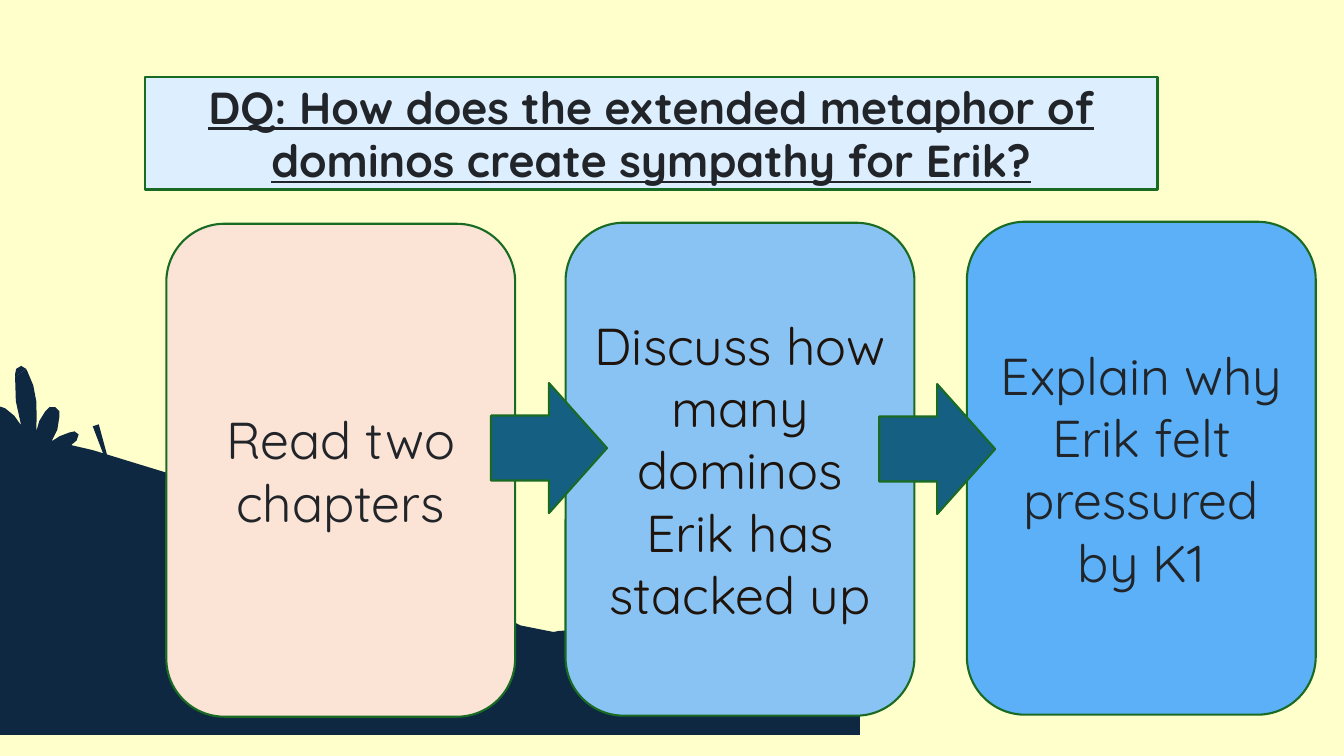
import pptx
import pptx.dml.color
import pptx.enum.shapes
import pptx.enum.text
import pptx.util

Inches = pptx.util.Inches
Pt = pptx.util.Pt
RGBColor = pptx.dml.color.RGBColor
MSO_SHAPE = pptx.enum.shapes.MSO_SHAPE

CREAM = RGBColor(0xFF, 0xFF, 0xCC)
NAVY = RGBColor(0x0E, 0x28, 0x41)
GREEN = RGBColor(0x19, 0x6B, 0x24)
TEAL = RGBColor(0x15, 0x60, 0x82)
PALE_BLUE = RGBColor(0xDD, 0xEE, 0xFF)
PEACH = RGBColor(0xFB, 0xE3, 0xD6)
SKY = RGBColor(0x89, 0xC3, 0xF3)
BRIGHT_BLUE = RGBColor(0x5B, 0xB0, 0xF7)
CHARCOAL = RGBColor(0x21, 0x25, 0x29)
BROWN_BLACK = RGBColor(0x1F, 0x14, 0x0C)

# Each outline is a start point, then line ends (2 numbers) or Bézier curves (6 numbers).
HILL = [
    (-0.3, 4.18), (-0.3, 7.29), (8.53, 7.29), (8.53, 6.64), (7.91, 6.41),
    (7.84, 6.41, 7.74, 6.41, 7.67, 6.36), (7.12, 6.09), (7.06, 6.08),
    (6.9, 6.08, 6.47, 6.22, 6.31, 6.22), (6.24, 6.22), (5.54, 6.26), (5.49, 6.27),
    (5.32, 6.27, 5, 6.17, 4.85, 6.05), (4.69, 5.91, 4.15, 5.46, 4.05, 5.45),
    (2.48, 5.3), (2.44, 5.29, 2.11, 4.88, 1.98, 4.79),
    (1.85, 4.69, 0.05, 4.23, -0.3, 4.18),
]
LEAF_TIP = [(0.21, 3.63), (0.16, 3.66), (0.15, 3.71), (0.15, 3.74), (0.26, 3.66)]
LEAF_BASE = [(0.44, 4.45), (0.5, 4.46), (0.63, 4.48)]
LEAVES = [
    (0.26, 3.66), (0.15, 3.74), (0.14, 3.9, 0.16, 4.06, 0.21, 4.22),
    (0.17, 4.15, 0.12, 4.09, 0.05, 4.05), (-0.01, 4.03),
    (-0.04, 4.03), (-0.06, 4.1),
    (-0.05, 4.2, -0.01, 4.31, 0.06, 4.39), (0.44, 4.45), (0.63, 4.48),
    (0.76, 4.37), (0.78, 4.31), (0.74, 4.28), (0.69, 4.29),
    (0.62, 4.31, 0.56, 4.34, 0.51, 4.38), (0.56, 4.31, 0.59, 4.22, 0.59, 4.13),
    (0.59, 4.08), (0.55, 4.04), (0.49, 4.04), (0.45, 4.08),
    (0.4, 4.14, 0.37, 4.21, 0.36, 4.28), (0.36, 4.18, 0.37, 4.08, 0.36, 3.98),
    (0.35, 3.87, 0.32, 3.77, 0.27, 3.68),
]
STEM = [(0.98, 4.21), (0.92, 4.23), (1.05, 4.57), (1.08, 4.58)]


def trace_outline(outline, steps=2):
    """Return the outline's points in EMU, with each curve sampled evenly."""
    points = [outline[0]]
    for segment in outline[1:]:
        if len(segment) == 2:
            points.append(segment)
            continue
        controls = [points[-1], segment[:2], segment[2:4], segment[4:]]
        for step in range(1, steps + 1):
            t = step / steps
            weights = ((1 - t) ** 3, 3 * t * (1 - t) ** 2, 3 * t * t * (1 - t), t ** 3)
            points.append(tuple(
                sum(weight * control[axis] for weight, control in zip(weights, controls))
                for axis in (0, 1)
            ))
    return [(Inches(x), Inches(y)) for x, y in points]


def style_box(shape, fill, text="", color=CHARCOAL, **font_format):
    shape.fill.solid()
    shape.fill.fore_color.rgb = fill
    shape.line.color.rgb = GREEN
    shape.line.width = Pt(1.5)
    if not text:
        return
    frame = shape.text_frame
    frame.word_wrap = True
    frame.auto_size = pptx.enum.text.MSO_AUTO_SIZE.NONE
    frame.vertical_anchor = pptx.enum.text.MSO_ANCHOR.MIDDLE
    paragraph = frame.paragraphs[0]
    paragraph.text = text
    paragraph.alignment = pptx.enum.text.PP_ALIGN.CENTER
    font = paragraph.runs[0].font
    font.color.rgb = color
    for name, value in {"name": "Quicksand", **font_format}.items():
        setattr(font, name, value)


presentation = pptx.Presentation()
presentation.slide_width = Inches(13.33)
presentation.slide_height = Inches(7.5)
slide = presentation.slides.add_slide(presentation.slide_layouts[5])
slide.background.fill.solid()
slide.background.fill.fore_color.rgb = CREAM

title = slide.shapes.title
title.left, title.top = Inches(1.44), Inches(0.76)
title.width, title.height = Inches(10.04), Inches(1.12)
style_box(
    title, PALE_BLUE,
    "DQ: How does the extended metaphor of dominos create sympathy for Erik?",
    size=Pt(32), bold=True, underline=True,
)

for outline in (HILL, LEAF_TIP, LEAF_BASE, LEAVES, STEM):
    points = trace_outline(outline)
    builder = slide.shapes.build_freeform(*points[0])
    builder.add_line_segments(points[1:], close=True)
    silhouette = builder.convert_to_shape()
    silhouette.shadow.inherit = False
    silhouette.fill.solid()
    silhouette.fill.fore_color.rgb = NAVY
    silhouette.line.fill.background()

cards = [
    (5.61, 2.21, SKY, "Discuss how many dominos Erik has stacked up", BROWN_BLACK),
    (9.59, 2.2, BRIGHT_BLUE, "Explain why Erik felt pressured by K1", CHARCOAL),
    (1.65, 2.22, PEACH, "Read two chapters", CHARCOAL),
]
for left, top, fill, text, color in cards:
    card = slide.shapes.add_shape(
        MSO_SHAPE.ROUNDED_RECTANGLE, Inches(left), Inches(top), Inches(3.46), Inches(4.89)
    )
    card.shadow.inherit = False
    style_box(card, fill, text, color, size=Pt(37))

for left, top in ((8.72, 3.81), (4.87, 3.8)):
    arrow = slide.shapes.add_shape(
        MSO_SHAPE.RIGHT_ARROW, Inches(left), Inches(top), Inches(1.15), Inches(1.29)
    )
    arrow.shadow.inherit = False
    style_box(arrow, TEAL)

presentation.save("out.pptx")
